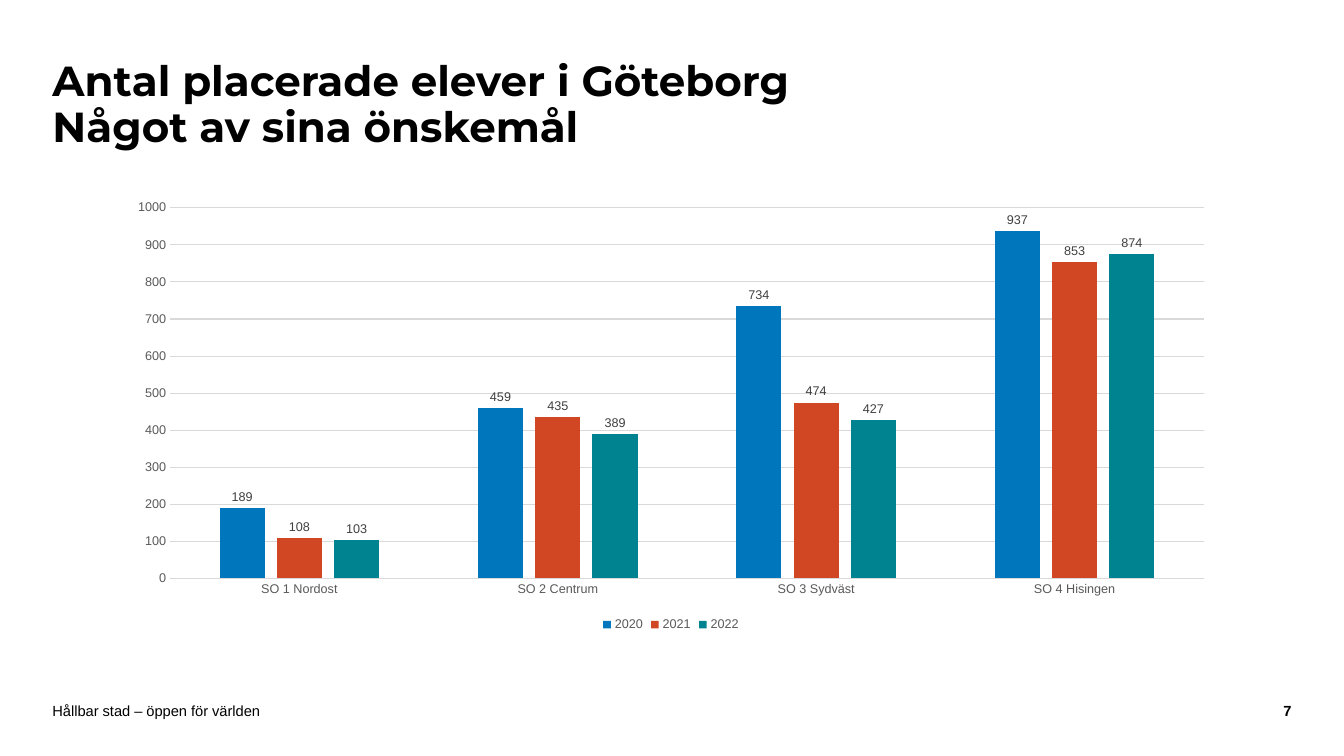
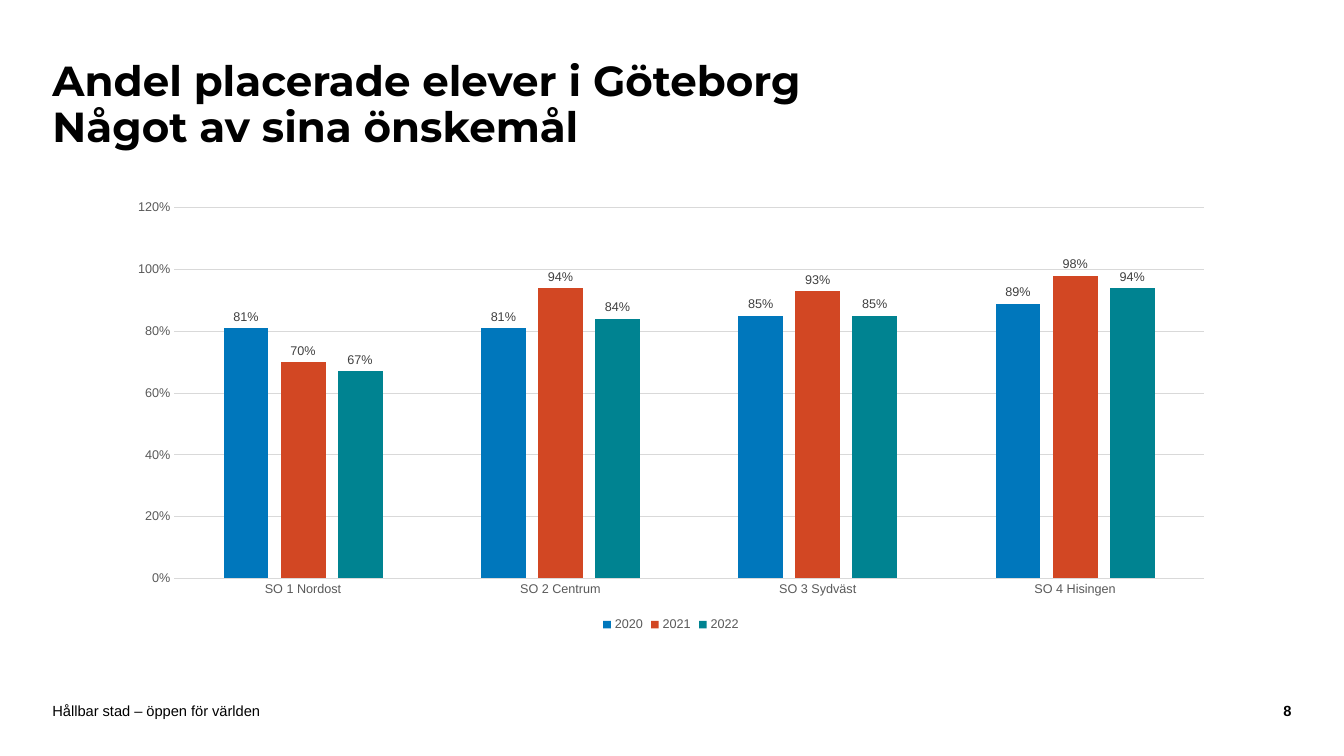
from pptx import Presentation
from pptx import util as u
from pptx.chart import data as chart_data
from pptx.dml import color
from pptx.enum import chart as ch
from pptx.enum import text

COLORS = {
    "background": "FFFFFF",
    "text": "000000",
    "axis": "595959",
    "label": "404040",
    "grid": "D9D9D9",
    "2020": "0077BC",
    "2021": "D24723",
    "2022": "008391",
}
BODY_FONT = "Arial"
TITLE_FONT = "Montserrat"
TITLE_BOX = (0.52, 0.42, 10.03, 1.26)
CHART_BOX = (1.15, 1.9, 11.01, 4.41)
FOOTER_BOX = (0.52, 6.97, 12.29, 0.17)
NUMBER_WIDTH = 0.64
FOOTER_TEXT = "Hållbar stad – öppen för världen"
REGIONS = ("SO 1 Nordost", "SO 2 Centrum", "SO 3 Sydväst", "SO 4 Hisingen")

SLIDES = [
    {
        "number": 7,
        "title": "Antal placerade elever i Göteborg\nNågot av sina önskemål",
        "series": {
            "2020": (189, 459, 734, 937),
            "2021": (108, 435, 474, 853),
            "2022": (103, 389, 427, 874),
        },
        "format": "General",
        "maximum": 1000,
        "step": 100,
    },
    {
        "number": 8,
        "title": "Andel placerade elever i Göteborg\nNågot av sina önskemål",
        "series": {
            "2020": (0.81, 0.81, 0.85, 0.89),
            "2021": (0.7, 0.94, 0.93, 0.98),
            "2022": (0.67, 0.84, 0.85, 0.94),
        },
        "format": "0%",
        "maximum": 1.2,
        "step": 0.2,
    },
]


def rgb(name):
    return color.RGBColor.from_string(COLORS[name])


def inches(box):
    return [u.Inches(length) for length in box]


def style_font(font, size, color_name, name=BODY_FONT, bold=False):
    font.name = name
    font.size = u.Pt(size)
    font.bold = bold
    font.color.rgb = rgb(color_name)


def style_line(line, color_name):
    line.color.rgb = rgb(color_name)
    line.width = u.Pt(0.75)


def set_frame(frame, vertical_margin=0):
    frame.word_wrap = True
    frame.auto_size = text.MSO_AUTO_SIZE.NONE
    frame.vertical_anchor = text.MSO_ANCHOR.MIDDLE
    frame.margin_left = frame.margin_right = 0
    frame.margin_top = frame.margin_bottom = u.Inches(vertical_margin)


def add_title(slide, box, wording):
    title = slide.shapes.title
    title.left, title.top, title.width, title.height = inches(box)
    set_frame(title.text_frame, 0.05)
    paragraph = title.text_frame.paragraphs[0]
    paragraph.text = wording
    paragraph.alignment = text.PP_ALIGN.LEFT
    paragraph.line_spacing = 0.9
    style_font(paragraph.font, 30, "text", TITLE_FONT, True)


def add_label(slide, box, wording, alignment, bold=False):
    label = slide.shapes.add_textbox(*inches(box))
    set_frame(label.text_frame)
    paragraph = label.text_frame.paragraphs[0]
    paragraph.text = wording
    paragraph.alignment = alignment
    style_font(paragraph.font, 10.5, "text", bold=bold)


def add_footer(slide, box, number):
    left, top, width, height = box
    number_left = left + width - NUMBER_WIDTH
    add_label(slide, (left, top, 9.45, height), FOOTER_TEXT, text.PP_ALIGN.LEFT)
    add_label(slide, (number_left, top, NUMBER_WIDTH, height), str(number),
              text.PP_ALIGN.RIGHT, True)


def style_axes(chart, content):
    for axis in (chart.category_axis, chart.value_axis):
        axis.major_tick_mark = axis.minor_tick_mark = ch.XL_TICK_MARK.NONE
        style_font(axis.tick_labels.font, 9, "axis")
    style_line(chart.category_axis.format.line, "grid")
    value_axis = chart.value_axis
    value_axis.format.line.fill.background()
    value_axis.has_major_gridlines = True
    style_line(value_axis.major_gridlines.format.line, "grid")
    value_axis.minimum_scale = 0
    value_axis.maximum_scale = content["maximum"]
    value_axis.major_unit = content["step"]
    value_axis.tick_labels.number_format = content["format"]
    value_axis.tick_labels.number_format_is_linked = False


def style_series(series, number_format):
    series.format.fill.solid()
    series.format.fill.fore_color.rgb = rgb(series.name)
    series.invert_if_negative = False
    labels = series.data_labels
    labels.show_value = True
    labels.position = ch.XL_LABEL_POSITION.OUTSIDE_END
    labels.number_format = number_format
    labels.number_format_is_linked = False
    style_font(labels.font, 9, "label")


def add_column_chart(slide, box, content):
    values = chart_data.CategoryChartData(number_format=content["format"])
    values.categories = REGIONS
    for year, figures in content["series"].items():
        values.add_series(year, figures)
    chart = slide.shapes.add_chart(
        ch.XL_CHART_TYPE.COLUMN_CLUSTERED, *inches(box), values).chart
    style_font(chart.font, 10, "text")
    chart.has_title = False
    chart.has_legend = True
    chart.legend.position = ch.XL_LEGEND_POSITION.BOTTOM
    chart.legend.include_in_layout = False
    style_font(chart.legend.font, 9, "axis")
    style_axes(chart, content)
    plot = chart.plots[0]
    plot.gap_width = 219
    plot.overlap = -27
    plot.vary_by_categories = False
    for series in plot.series:
        style_series(series, content["format"])


def add_chart_slide(presentation, content):
    slide = presentation.slides.add_slide(presentation.slide_layouts[5])
    add_title(slide, TITLE_BOX, content["title"])
    add_column_chart(slide, CHART_BOX, content)
    add_footer(slide, FOOTER_BOX, content["number"])


def main():
    presentation = Presentation()
    presentation.slide_width = u.Inches(13.33)
    presentation.slide_height = u.Inches(7.5)
    background = presentation.slide_master.background.fill
    background.solid()
    background.fore_color.rgb = rgb("background")
    for content in SLIDES:
        add_chart_slide(presentation, content)
    presentation.save("out.pptx")


if __name__ == "__main__":
    main()
